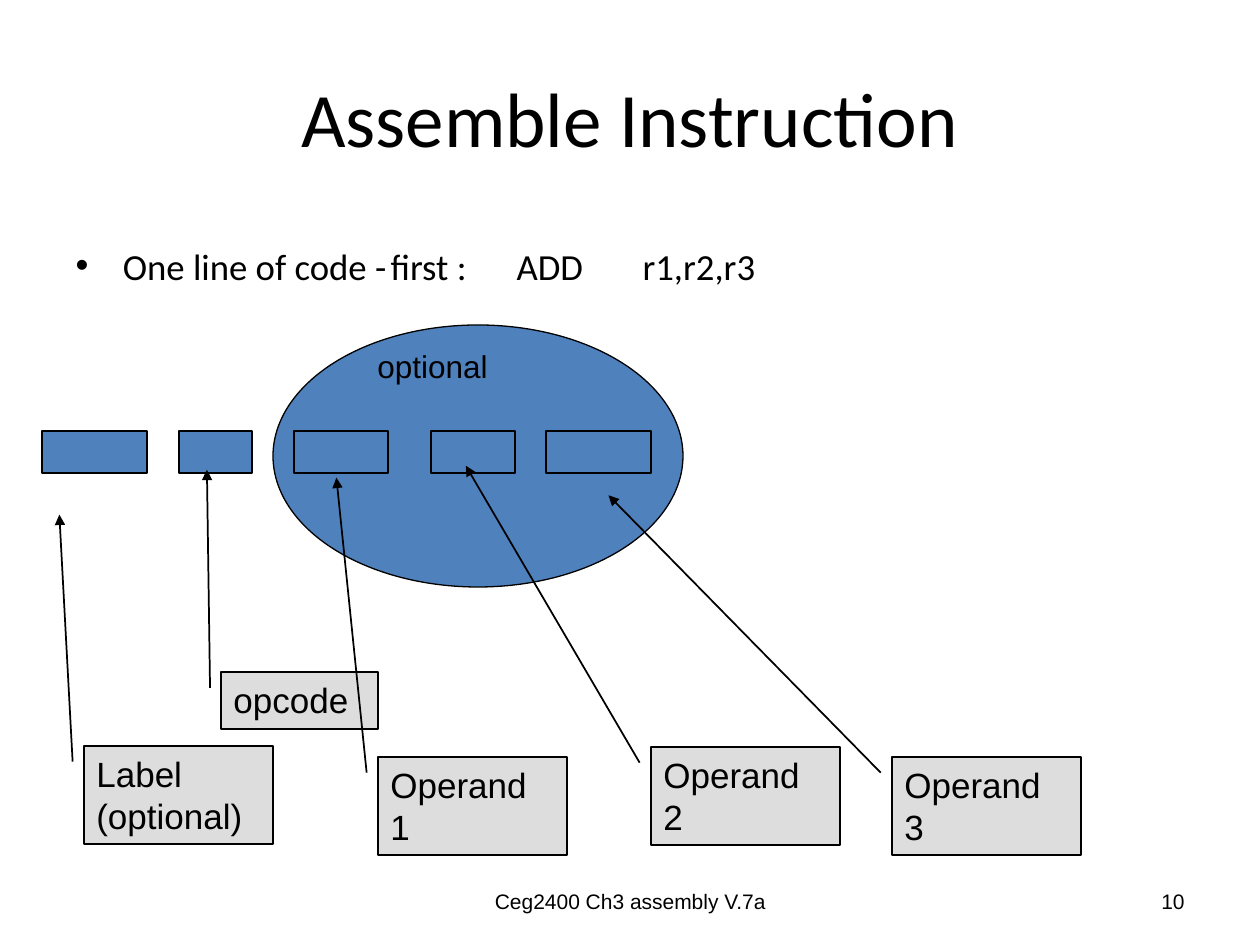
from lxml import etree
from pptx import Presentation
from pptx.dml.color import RGBColor
from pptx.enum.shapes import MSO_SHAPE
from pptx.enum.text import MSO_ANCHOR, MSO_AUTO_SIZE, PP_ALIGN
from pptx.oxml.ns import qn
from pptx.util import Pt

RECT, OVAL, CALL = MSO_SHAPE.RECTANGLE, MSO_SHAPE.OVAL, MSO_SHAPE.LINE_CALLOUT_1
TOP, MID = MSO_ANCHOR.TOP, MSO_ANCHOR.MIDDLE
LEFT, MIDDLE, RIGHT = PP_ALIGN.LEFT, PP_ALIGN.CENTER, PP_ALIGN.RIGHT
GROW, FIXED = MSO_AUTO_SIZE.SHAPE_TO_FIT_TEXT, MSO_AUTO_SIZE.NONE

# Content: lengths in px, 126 to the inch
TITLE = "Assemble Instruction"
CODE = ["One line of code -", "first :", "ADD", "r1,r2,r3"]
STOPS = [343, 436, 528]
FIELDS = [(42, 105), (179, 73), (294, 94), (431, 84), (546, 105)]  # left, width
FIELD_TOP, FIELD_H = 431, 42
GROUP = (273, 325, 410, 262)
# text, box, callout line as fractions of the box: y, x, end y, end x
NOTES = [
    ("Label\n(optional)", (84, 746, 189, 98), (0.16, -0.06, -2.36, -0.13)),
    ("opcode", (221, 672, 157, 57), (0.28, -0.07, -3.55, -0.09)),
    ("Operand 1", (378, 757, 189, 98), (0.16, -0.06, -2.85, -0.22)),
    ("Operand 2", (651, 747, 189, 98), (0.16, -0.06, -2.87, -0.98)),
    ("Operand 3", (892, 757, 189, 98), (0.16, -0.06, -2.67, -1.5)),
]
# text, box, size name, alignment, anchor, wrap
LABELS = [
    ("optional", (365, 341, 136, 50), "tag", LEFT, TOP, False),
    ("Ceg2400 Ch3 assembly V.7a", (431, 876, 399, 50), "foot", MIDDLE, MID, True),
    ("10", (903, 876, 294, 50), "foot", RIGHT, MID, True),
]
THEME = {
    "ink": RGBColor(0, 0, 0),
    "blue": RGBColor(0x4F, 0x81, 0xBD),
    "grey": RGBColor(0xDD, 0xDD, 0xDD),
    "head": "Calibri", "text": "Arial",
    "title": 44, "body": 21, "note": 20, "tag": 18, "foot": 12,
}


def px(n):
    return round(n * 914400 / 126)


def place(shape, box):
    shape.left, shape.top, shape.width, shape.height = map(px, box)


def write(frame, text, size, face="text", align=LEFT, anchor=TOP):
    frame.text = text
    frame.vertical_anchor = anchor
    for par in frame.paragraphs:
        par.alignment = align
        font = par.font
        font.name, font.size = THEME[face], Pt(THEME[size])
        font.color.rgb = THEME["ink"]


def draw(kind, box, fill, width):
    shape = slide.shapes.add_shape(kind, *map(px, box))
    shape.shadow.inherit = False
    shape.fill.solid()
    shape.fill.fore_color.rgb = THEME[fill]
    shape.line.color.rgb = THEME["ink"]
    shape.line.width = Pt(width)
    return shape


def set_list(par):
    props = par._p.get_or_add_pPr()
    props.set("marL", str(px(47)))
    props.set("indent", str(px(-47)))
    etree.SubElement(props, qn("a:buFont"), typeface=THEME["text"])
    etree.SubElement(props, qn("a:buChar"), char="•")
    tabs = etree.SubElement(props, qn("a:tabLst"))
    for stop in STOPS:
        etree.SubElement(tabs, qn("a:tab"), pos=str(px(stop)), algn="l")


prs = Presentation()
prs.slide_width, prs.slide_height = px(1260), px(945)
slide = prs.slides.add_slide(prs.slide_layouts[1])

# Title and code line
title, body = slide.placeholders
place(title, (63, 38, 1134, 157))
write(title.text_frame, TITLE, "title", "head", MIDDLE, MID)
place(body, (63, 237, 1134, 92))
body.text_frame.text = "\t".join(CODE)
line = body.text_frame.paragraphs[0]
set_list(line)
write(body.text_frame, "\t".join(CODE), "body", "head")
line.space_before = Pt(0)
body.text_frame.auto_size = FIXED

# Instruction fields over the optional group
draw(OVAL, GROUP, "blue", 0.75)
for left, width in FIELDS:
    draw(RECT, (left, FIELD_TOP, width, FIELD_H), "blue", 0.75)

# Callouts with arrowheads
for text, box, ends in NOTES:
    note = draw(CALL, box, "grey", 1)
    for i, end in enumerate(ends):
        note.adjustments[i] = end
    etree.SubElement(note.line._get_or_add_ln(), qn("a:tailEnd"), type="triangle")
    write(note.text_frame, text, "note")
    note.text_frame.word_wrap = True
    note.text_frame.auto_size = GROW

# Group label and footer
for text, box, size, align, anchor, wrap in LABELS:
    label = slide.shapes.add_textbox(*map(px, box))
    write(label.text_frame, text, size, align=align, anchor=anchor)
    label.text_frame.word_wrap = wrap

prs.save("out.pptx")
